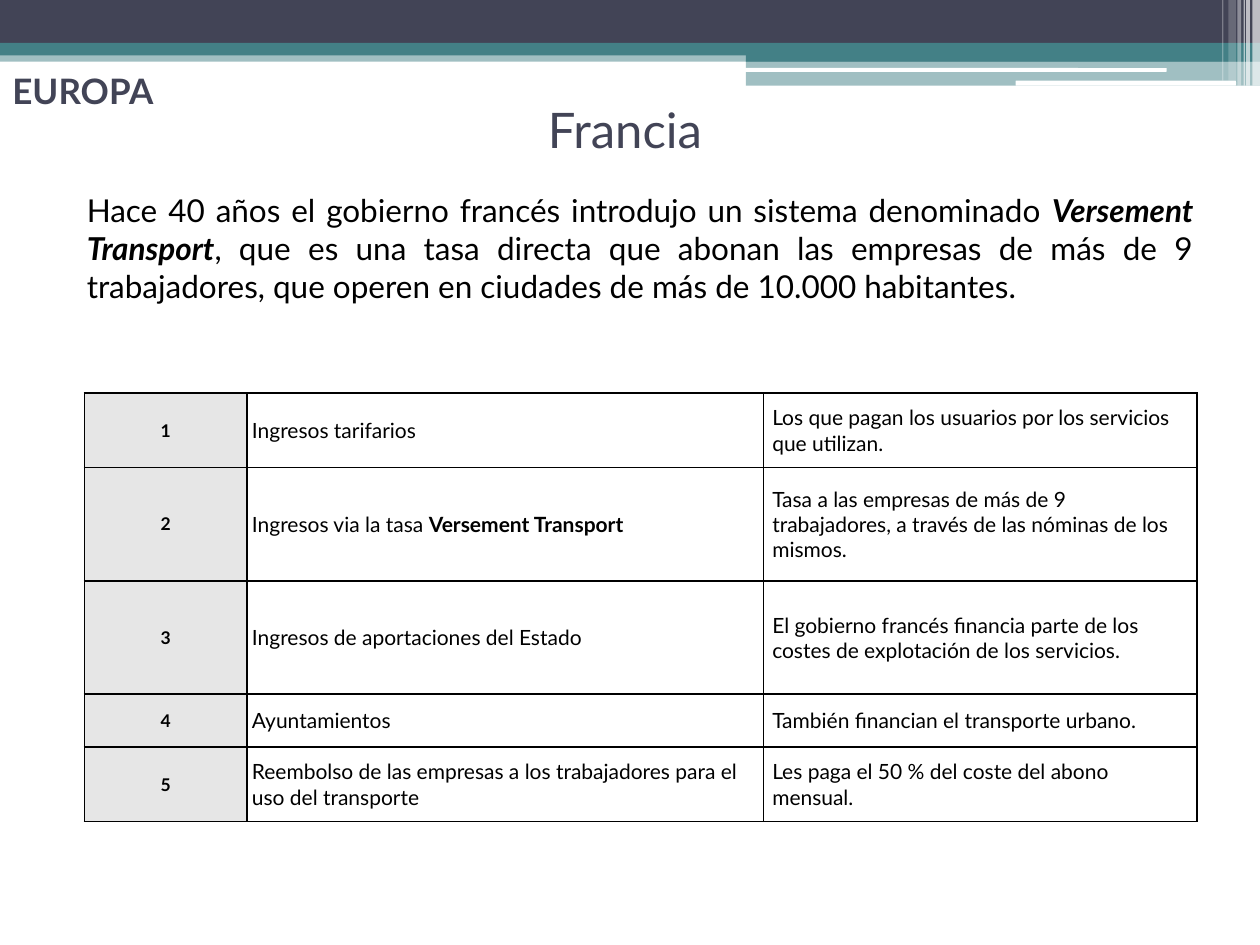
from lxml import etree
from pptx import Presentation
from pptx.dml.color import RGBColor
from pptx.enum.shapes import MSO_SHAPE
from pptx.enum.text import MSO_ANCHOR, PP_ALIGN
from pptx.oxml.ns import qn
from pptx.util import Inches, Pt

RECT, ROUND = MSO_SHAPE.RECTANGLE, MSO_SHAPE.ROUNDED_RECTANGLE
LEFT, CENTER, JUSTIFY = PP_ALIGN.LEFT, PP_ALIGN.CENTER, PP_ALIGN.JUSTIFY
TOP, MIDDLE = MSO_ANCHOR.TOP, MSO_ANCHOR.MIDDLE
FONT = "Lato"
NAVY, TEAL, WHITE, BLACK, GREY = "424456", "438086", "FFFFFF", "000000", "E6E6E6"

# Content: runs are (text, font format)
BOLD = {"bold": True}
REGION = [("EUROPA", BOLD)]
TITLE = [("Francia ", {})]
BODY = [
    ("Hace 40 años el gobierno francés introdujo un sistema denominado ", {}),
    ("Versement Transport", {"bold": True, "italic": True}),
    (", que es una tasa directa que abonan las empresas de más de 9 trabajadores, "
     "que operen en ciudades de más de 10.000 habitantes.", {}),
]
INCOME = [
    ([("Ingresos tarifarios", {})],
     "Los que pagan los usuarios por los servicios que utilizan."),
    ([("Ingresos via la tasa ", {}), ("Versement Transport", BOLD)],
     "Tasa a las empresas de más de 9 trabajadores, a través de las nóminas de los mismos."),
    ([("Ingresos de aportaciones del Estado", {})],
     "El gobierno francés financia parte de los costes de explotación de los servicios."),
    ([("Ayuntamientos", {})],
     "También financian el transporte urbano."),
    ([("Reembolso de las empresas a los trabajadores para el uso del transporte", {})],
     "Les paga el 50 % del coste del abono mensual."),
]
COL_WIDTHS = [1.29, 4.1, 3.44]
ROW_HEIGHTS = [0.59, 0.9, 0.9, 0.42, 0.59]

# Header band: shape, left, top, width, height, colour, opacity in percent
BAND = [
    (RECT, 0, 0.4, 10, 0.09, TEAL, 50),
    (RECT, 0, 0, 10, 0.34, NAVY, 100),
    (RECT, 0, 0.34, 10, 0.1, TEAL, 100),
    (RECT, 5.92, 0.39, 4.08, 0.1, TEAL, 100),
    (RECT, 5.92, 0.48, 4.08, 0.2, TEAL, 50),
    (ROUND, 5.91, 0.54, 3.35, 0.03, WHITE, 100),
    (ROUND, 8.06, 0.64, 1.75, 0.04, WHITE, 100),
]
# Vertical stripes: left, width, height, opacity
STRIPES = [
    (9.94, 0.06, 0.68, 65), (9.89, 0.03, 0.68, 65), (9.87, 0.01, 0.68, 60),
    (9.82, 0.03, 0.68, 40), (9.75, 0.06, 0.64, 20), (9.7, 0.01, 0.64, 30),
]


def rgb(value):
    return RGBColor.from_string(value)


def add_block(s, kind, left, top, width, height, color, opacity):
    sp = s.shapes.add_shape(kind, *map(Inches, (left, top, width, height)))
    sp.shadow.inherit = False
    sp.line.fill.background()
    sp.fill.solid()
    sp.fill.fore_color.rgb = rgb(color)
    if opacity < 100:
        clr = sp.fill._xPr.find(qn("a:solidFill"))[0]
        etree.SubElement(clr, qn("a:alpha"), val=str(opacity * 1000))


def write(tf, runs, size, color=BLACK, align=LEFT, spacing=0):
    p = tf.paragraphs[0]
    for name, value in {"alignment": align, "space_before": Pt(spacing),
                        "space_after": Pt(spacing)}.items():
        setattr(p, name, value)
    for text, extra in runs:
        r = p.add_run()
        r.text = text
        fmt = {"name": FONT, "size": Pt(size), "bold": False, "italic": False}
        for name, value in {**fmt, **extra}.items():
            setattr(r.font, name, value)
        r.font.color.rgb = rgb(color)


def place_text(sp, box, anchor, *args):
    sp.left, sp.top, sp.width, sp.height = map(Inches, box)
    sp.text_frame.word_wrap = True
    sp.text_frame.vertical_anchor = anchor
    write(sp.text_frame, *args)


def add_borders(cell):
    tc_pr = cell._tc.get_or_add_tcPr()
    for i, side in enumerate(("lnL", "lnR", "lnT", "lnB")):
        ln = etree.Element(qn("a:" + side), w=str(Pt(1)))
        fill = etree.SubElement(ln, qn("a:solidFill"))
        etree.SubElement(fill, qn("a:srgbClr"), val=BLACK)
        tc_pr.insert(i, ln)


def fill_cell(cell, runs, size, align, left_margin, color=None):
    margins = {"margin_left": left_margin, "margin_right": 0.07,
               "margin_top": 0, "margin_bottom": 0}
    for name, value in margins.items():
        setattr(cell, name, Inches(value))
    cell.vertical_anchor = MIDDLE
    if color:
        cell.fill.solid()
        cell.fill.fore_color.rgb = rgb(color)
    else:
        cell.fill.background()
    add_borders(cell)
    write(cell.text_frame, runs, size, BLACK, align, 5)


def main():
    prs = Presentation()
    prs.slide_width, prs.slide_height = Inches(10), Inches(7.5)
    s = prs.slides.add_slide(prs.slide_layouts[5])

    # Header band
    for block in BAND:
        add_block(s, *block)
    for left, width, height, opacity in STRIPES:
        add_block(s, RECT, left, 0, width, height, WHITE, opacity)

    # Region, title and body text
    region, body = (s.shapes.add_textbox(0, 0, 0, 0) for _ in range(2))
    place_text(region, (0, 0.13, 9, 1.17), MIDDLE, REGION, 20, NAVY)
    place_text(s.shapes.title, (0.51, 0.44, 9, 1.17), MIDDLE, TITLE, 28, NAVY, CENTER)
    place_text(body, (0.59, 1.47, 8.98, 1.01), TOP, BODY, 18, BLACK, JUSTIFY)

    # Income table
    frame = s.shapes.add_table(len(INCOME), len(COL_WIDTHS), Inches(0.67), Inches(3.12),
                               Inches(sum(COL_WIDTHS)), Inches(sum(ROW_HEIGHTS)))
    table = frame.table
    table.first_row = table.horz_banding = False
    for col, width in zip(table.columns, COL_WIDTHS):
        col.width = Inches(width)
    for row, height in zip(table.rows, ROW_HEIGHTS):
        row.height = Inches(height)
    for i, (source, detail) in enumerate(INCOME):
        fill_cell(table.cell(i, 0), [(str(i + 1), BOLD)], 10, CENTER, 0.07, GREY)
        fill_cell(table.cell(i, 1), source, 12, LEFT, 0.04)
        fill_cell(table.cell(i, 2), [(detail, {})], 12, LEFT, 0.07)

    prs.save("out.pptx")


if __name__ == "__main__":
    main()
